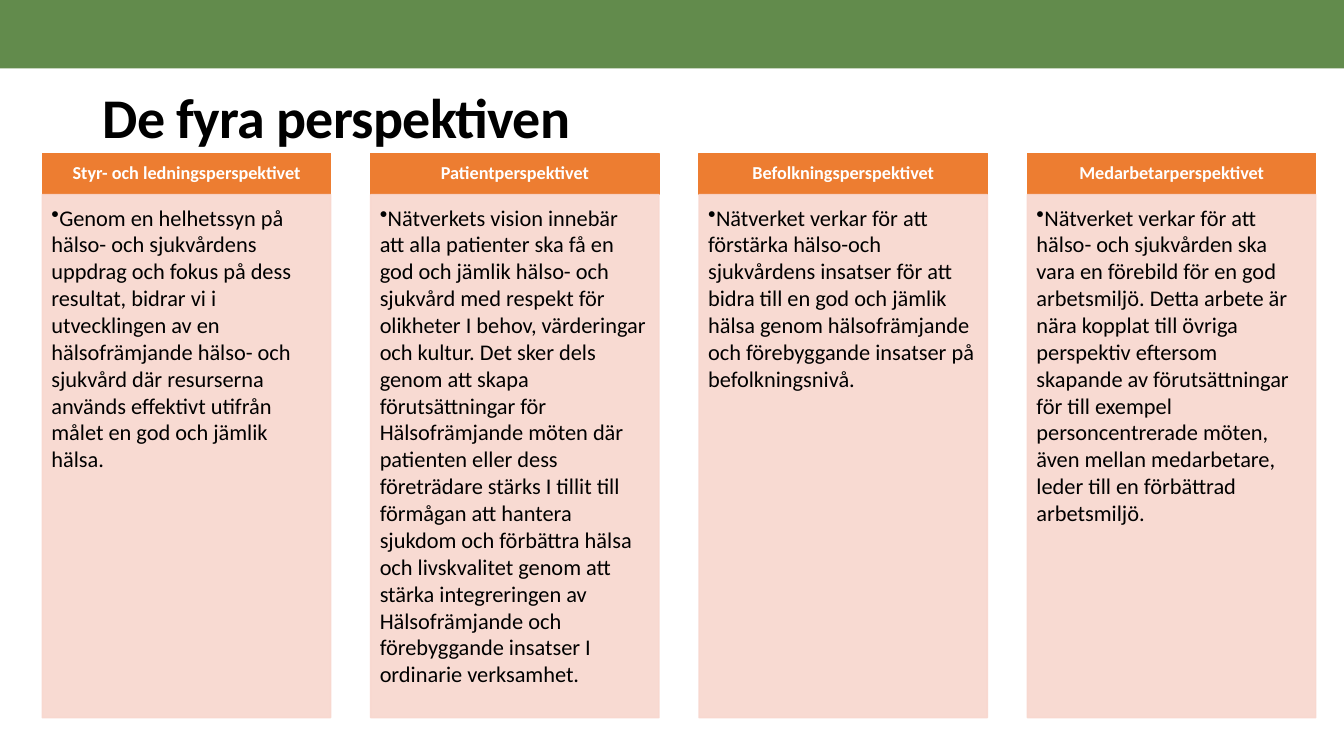
"""Build the slide on the four perspectives."""
from lxml.etree import SubElement
from pptx import Presentation
from pptx.dml.color import RGBColor
from pptx.enum.shapes import MSO_SHAPE
from pptx.enum.text import MSO_ANCHOR, PP_ALIGN
from pptx.oxml.ns import qn
from pptx.util import Inches, Pt

GREEN = RGBColor(0x44, 0x75, 0x2A)
ORANGE = RGBColor(0xED, 0x7D, 0x31)
PINK = RGBColor(0xF8, 0xD7, 0xCE)
BLACK = RGBColor(0, 0, 0)
WHITE = RGBColor(0xFF, 0xFF, 0xFF)

VIEWS = [
    ("Styr- och ledningsperspektivet",
     "Genom en helhetssyn på hälso- och sjukvårdens uppdrag och fokus på dess "
     "resultat, bidrar vi i utvecklingen av en hälsofrämjande hälso- och sjukvård "
     "där resurserna används effektivt utifrån målet en god och jämlik hälsa."),
    ("Patientperspektivet",
     "Nätverkets vision innebär att alla patienter ska få en god och jämlik hälso- "
     "och sjukvård med respekt för olikheter I behov, värderingar och kultur. Det "
     "sker dels genom att skapa förutsättningar för Hälsofrämjande möten där "
     "patienten eller dess företrädare stärks I tillit till förmågan att hantera "
     "sjukdom och förbättra hälsa och livskvalitet genom att stärka integreringen "
     "av Hälsofrämjande och förebyggande insatser I ordinarie verksamhet."),
    ("Befolkningsperspektivet",
     "Nätverket verkar för att förstärka hälso-och sjukvårdens insatser för att "
     "bidra till en god och jämlik hälsa genom hälsofrämjande och förebyggande "
     "insatser på befolkningsnivå."),
    ("Medarbetarperspektivet",
     "Nätverket verkar för att hälso- och sjukvården ska vara en förebild för en "
     "god arbetsmiljö. Detta arbete är nära kopplat till övriga perspektiv eftersom "
     "skapande av förutsättningar för till exempel personcentrerade möten, även "
     "mellan medarbetare, leder till en förbättrad arbetsmiljö."),
]


class Deck:
    """Hold the style and the current slide."""

    font = "Calibri"

    def __init__(self):
        self.prs = Presentation()
        self.prs.slide_width = Inches(13.33)
        self.prs.slide_height = Inches(7.5)
        self.slide = self.prs.slides.add_slide(self.prs.slide_layouts[6])

    def fade(self, shape, alpha):
        """Make the fill and line of a shape partly clear."""
        for tint in shape._element.spPr.iter(qn("a:srgbClr")):
            SubElement(tint, qn("a:alpha"), val=str(alpha * 1000))

    def rect(self, box, fill, line=None, alpha=100):
        """Add a flat rectangle."""
        shape = self.slide.shapes.add_shape(MSO_SHAPE.RECTANGLE, *map(Inches, box))
        shape.shadow.inherit = False
        shape.fill.solid()
        shape.fill.fore_color.rgb = fill
        if line is None:
            shape.line.fill.background()
        else:
            shape.line.color.rgb = line
            shape.line.width = Pt(1)
        if alpha < 100:
            self.fade(shape, alpha)
        return shape

    def label(self, shape, text, size, color, pads, bold=False,
              align=PP_ALIGN.LEFT, anchor=MSO_ANCHOR.MIDDLE, bullet=False):
        """Set one paragraph of text in a shape."""
        frame = shape.text_frame
        frame.word_wrap = True
        frame.vertical_anchor = anchor
        (frame.margin_left, frame.margin_top,
         frame.margin_right, frame.margin_bottom) = map(Inches, pads)
        para = frame.paragraphs[0]
        para.text = text
        para.alignment = align
        if bullet:
            para.level = 1
            props = para._p.get_or_add_pPr()
            props.set("marL", "0")
            props.set("indent", str(Inches(-0.19)))
            SubElement(props, qn("a:buChar"), char="•")
        else:
            para.line_spacing = 0.9
        para.font.name = self.font
        para.font.size = Pt(size)
        para.font.bold = bold
        para.font.color.rgb = color
        return para

    def title(self, box, text):
        """Add the slide title."""
        shape = self.slide.shapes.add_textbox(*map(Inches, box))
        para = self.label(shape, text, 40, BLACK, (0.1, 0.05, 0.1, 0.05), bold=True)
        para.runs[0].font._element.set("spc", "-50")

    def column(self, left, head, body):
        """Add a heading bar with its text panel."""
        bar = self.rect((left, 1.52, 2.86, 0.41), ORANGE, ORANGE)
        self.label(bar, head, 13, WHITE, (0.1, 0.06, 0.1, 0.06), bold=True,
                   align=PP_ALIGN.CENTER)
        panel = self.rect((left, 1.93, 2.86, 5.19), PINK, PINK, alpha=90)
        self.label(panel, body, 16, BLACK, (0.09, 0.09, 0.12, 0.14),
                   anchor=MSO_ANCHOR.TOP, bullet=True)


def main():
    """Draw and save the slide."""
    deck = Deck()
    deck.rect((0, 0, 13.33, 0.68), GREEN, alpha=84)
    deck.title((0.92, 0.68, 11.5, 1.02), "De fyra perspektiven")
    first, last = 0.42, 10.19
    step = (last - first) / (len(VIEWS) - 1)
    for index, (head, body) in enumerate(VIEWS):
        deck.column(first + index * step, head, body)
    deck.prs.save("out.pptx")


if __name__ == "__main__":
    main()
